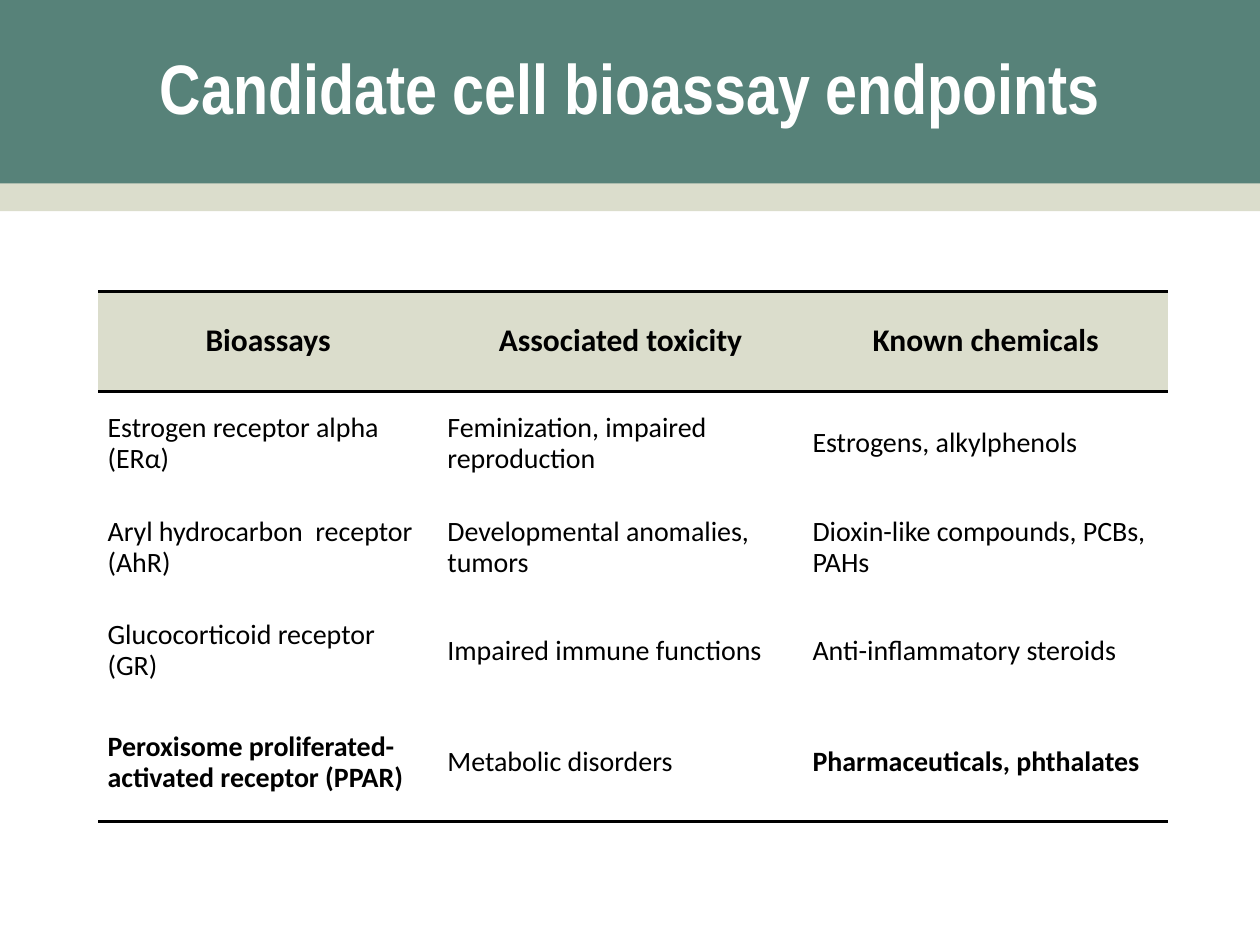
from lxml import etree
from pptx import Presentation
from pptx.dml.color import RGBColor
from pptx.enum.shapes import MSO_SHAPE
from pptx.enum.text import MSO_ANCHOR, PP_ALIGN
from pptx.oxml.ns import qn
from pptx.util import Cm, Pt

RECT = MSO_SHAPE.RECTANGLE
MID = MSO_ANCHOR.MIDDLE
LEFT, CENTER = PP_ALIGN.LEFT, PP_ALIGN.CENTER

HUES = {"green": "578279", "sand": "DBDDCC", "black": "000000", "white": "FFFFFF"}
WIDE, TALL = 25.4, 19.05
COLS = [6.85, 7.36, 7.36]
ROWS = [2.03, 2.09, 2.09, 2.09, 2.4]
DATA = [
    ["Bioassays", "Associated toxicity", "Known chemicals"],
    ["Estrogen receptor alpha (ERα)", "Feminization, impaired reproduction",
     "Estrogens, alkylphenols"],
    ["Aryl hydrocarbon  receptor (AhR)", "Developmental anomalies, tumors",
     "Dioxin-like compounds, PCBs, PAHs"],
    ["Glucocorticoid receptor (GR)", "Impaired immune functions",
     "Anti-inflammatory steroids"],
    ["Peroxisome proliferated-activated receptor (PPAR)", "Metabolic disorders",
     "Pharmaceuticals, phthalates"],
]
BOLD = {(4, 0), (4, 2)}


class Deck:
    """Hold the style and the current slide."""

    def __init__(self, slide):
        self.slide = slide
        self.head = "Arial Narrow"
        self.body = "Calibri"

    def color(self, name):
        return RGBColor.from_string(HUES[name])

    def text(self, frame, words, size, face, hue, bold, align):
        para = frame.paragraphs[0]
        para.alignment = align
        para.line_spacing = 0.9
        run = para.add_run()
        run.text = words
        run.font.size = Pt(size)
        run.font.name = face
        run.font.bold = bold
        run.font.color.rgb = self.color(hue)

    def band(self, top, high, hue):
        shape = self.slide.shapes.add_shape(RECT, 0, Cm(top), Cm(WIDE), Cm(high))
        shape.shadow.inherit = False
        shape.fill.solid()
        shape.fill.fore_color.rgb = self.color(hue)
        shape.line.fill.background()
        return shape

    def title(self, words, high):
        frame = self.band(0, high, "green").text_frame
        frame.word_wrap = True
        frame.vertical_anchor = MID
        self.text(frame, words, 40, self.head, "white", True, CENTER)

    def edge(self, cell, side, drawn):
        props = cell._tc.get_or_add_tcPr()
        line = etree.SubElement(props, qn(f"a:ln{side}"), w=str(Pt(2)))
        if drawn:
            fill = etree.SubElement(line, qn("a:solidFill"))
            etree.SubElement(fill, qn("a:srgbClr"), val=HUES["black"])
        else:
            etree.SubElement(line, qn("a:noFill"))

    def cell(self, cell, words, row, bold):
        head = row == 0
        ruled = {"T": row in (0, 1), "B": row in (0, len(ROWS) - 1)}
        for side in "LRTB":
            self.edge(cell, side, ruled.get(side, False))
        if head:
            cell.fill.solid()
            cell.fill.fore_color.rgb = self.color("sand")
        else:
            cell.fill.background()
        cell.vertical_anchor = MID
        cell.margin_left = cell.margin_right = Cm(0.19)
        cell.margin_top = cell.margin_bottom = Cm(0.1)
        self.text(cell.text_frame, words, 18 if head else 16, self.body, "black",
                  head or bold, CENTER if head else LEFT)

    def table(self, left, top):
        grid = self.slide.shapes.add_table(
            len(ROWS), len(COLS), Cm(left), Cm(top), Cm(sum(COLS)), Cm(sum(ROWS))).table
        grid.horz_banding = False
        for col, wide in zip(grid.columns, COLS):
            col.width = Cm(wide)
        for row, high in zip(grid.rows, ROWS):
            row.height = Cm(high)
        for r, line in enumerate(DATA):
            for c, words in enumerate(line):
                self.cell(grid.cell(r, c), words, r, (r, c) in BOLD)


def main():
    show = Presentation()
    show.slide_width, show.slide_height = Cm(WIDE), Cm(TALL)
    deck = Deck(show.slides.add_slide(show.slide_layouts[6]))
    deck.band(3.68, 0.58, "sand")
    deck.title("Candidate cell bioassay endpoints", 3.7)
    deck.table(1.98, 5.87)
    show.save("out.pptx")


if __name__ == "__main__":
    main()
